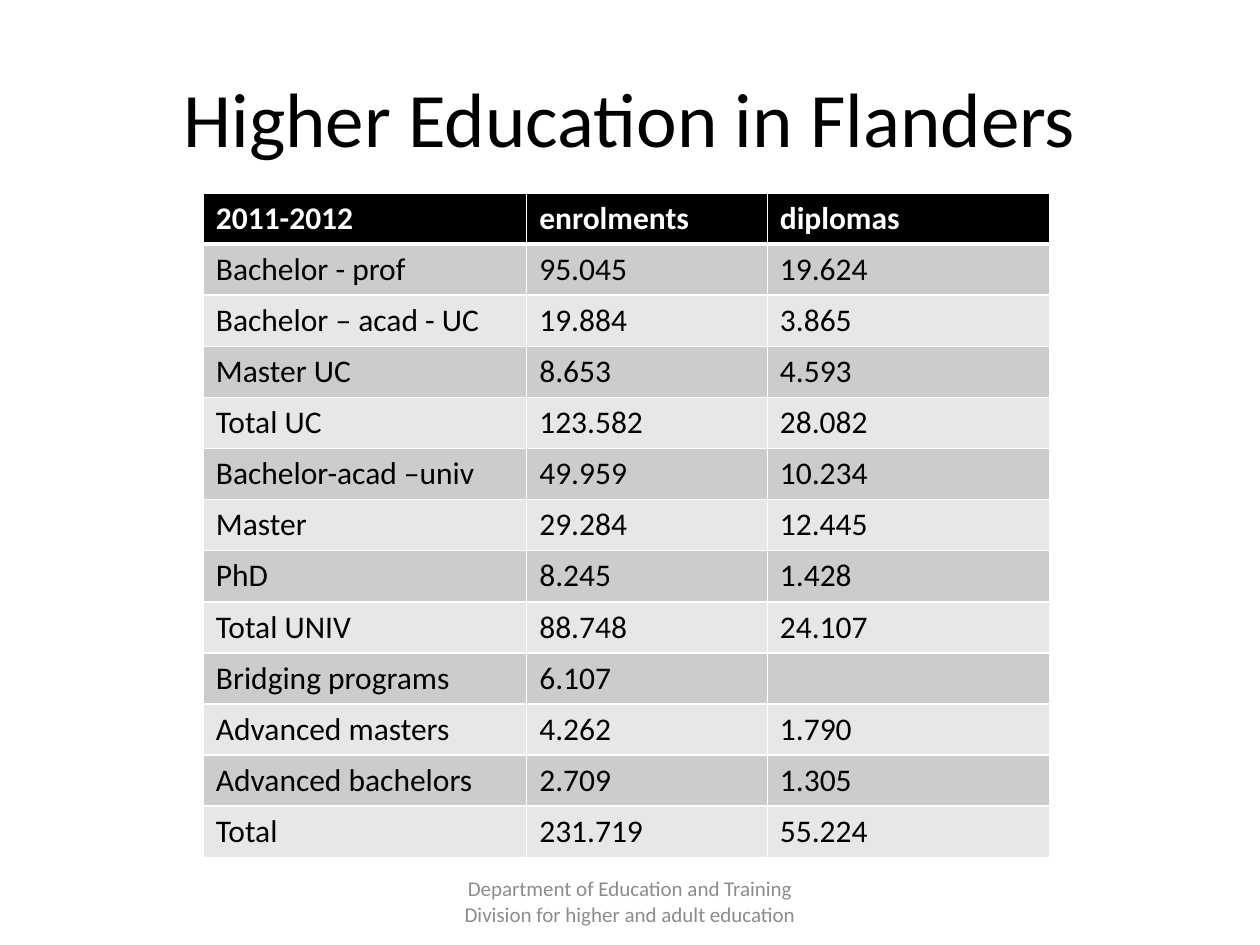
from lxml import etree
from pptx import Presentation
from pptx.dml.color import RGBColor
from pptx.enum.text import MSO_ANCHOR, PP_ALIGN
from pptx.oxml.ns import qn
from pptx.util import Pt

CENTER = PP_ALIGN.CENTER
LEFT = PP_ALIGN.LEFT
MIDDLE = MSO_ANCHOR.MIDDLE
THEME = {
    "font": "Calibri",
    "black": "000000",
    "white": "FFFFFF",
    "footer": "8C8C8C",
    "bands": ("CCCCCC", "E7E7E7"),
    "title_size": 44,
    "table_size": 18,
    "footer_size": 12,
}


def write_text(text_frame, text, *, size, color, bold=False, align=LEFT):
    paragraph = text_frame.paragraphs[0]
    paragraph.alignment = align
    paragraph.font.size = Pt(size)
    if not text:
        return
    run = paragraph.add_run()
    run.text = text
    run.font.name = THEME["font"]
    run.font.size = Pt(size)
    run.font.bold = bold
    run.font.color.rgb = RGBColor.from_string(color)


def add_border(cell, side, width):
    properties = cell._tc.get_or_add_tcPr()
    line = etree.SubElement(properties, qn(f"a:ln{side}"), w=str(Pt(width)))
    fill = etree.SubElement(line, qn("a:solidFill"))
    etree.SubElement(fill, qn("a:srgbClr"), val=THEME["white"])


presentation = Presentation()
presentation.slide_width = Pt(720)
presentation.slide_height = Pt(540)
slide = presentation.slides.add_slide(presentation.slide_layouts[5])

title = slide.shapes.title
title.left, title.top, title.width, title.height = Pt(36), Pt(21.6), Pt(648), Pt(90)
title.text_frame.vertical_anchor = MIDDLE
write_text(title.text_frame, "Higher Education in Flanders",
           size=THEME["title_size"], color=THEME["black"], align=CENTER)

footer = slide.shapes.add_textbox(Pt(246), Pt(500.5), Pt(228), Pt(28.8))
footer.text_frame.word_wrap = True
footer.text_frame.vertical_anchor = MIDDLE
write_text(footer.text_frame,
           "Department of Education and Training Division for higher and adult education",
           size=THEME["footer_size"], color=THEME["footer"], align=CENTER)

rows = [
    ("2011-2012", "enrolments", "diplomas"),
    ("Bachelor - prof", "95.045", "19.624"),
    ("Bachelor – acad - UC", "19.884", "3.865"),
    ("Master UC", "8.653", "4.593"),
    ("Total UC", "123.582", "28.082"),
    ("Bachelor-acad –univ", "49.959", "10.234"),
    ("Master", "29.284", "12.445"),
    ("PhD", "8.245", "1.428"),
    ("Total UNIV", "88.748", "24.107"),
    ("Bridging programs", "6.107", ""),
    ("Advanced masters", "4.262", "1.790"),
    ("Advanced bachelors", "2.709", "1.305"),
    ("Total", "231.719", "55.224"),
]
column_widths = (184.8, 137.5, 161.5)
row_height = 29.2
table = slide.shapes.add_table(
    len(rows), len(column_widths), Pt(116.2), Pt(110.3),
    Pt(sum(column_widths)), Pt(row_height * len(rows))).table
for column, width in zip(table.columns, column_widths):
    column.width = Pt(width)

for row_index, values in enumerate(rows):
    table.rows[row_index].height = Pt(row_height)
    is_header = row_index == 0
    fill_color = THEME["black"] if is_header else THEME["bands"][(row_index - 1) % 2]
    text_color = THEME["white"] if is_header else THEME["black"]
    border_widths = {"L": 1, "R": 1, "T": 3 if row_index == 1 else 1, "B": 3 if is_header else 1}
    for column_index, value in enumerate(values):
        cell = table.cell(row_index, column_index)
        for side, width in border_widths.items():
            add_border(cell, side, width)
        cell.fill.solid()
        cell.fill.fore_color.rgb = RGBColor.from_string(fill_color)
        write_text(cell.text_frame, value, size=THEME["table_size"],
                   color=text_color, bold=is_header)

presentation.save("out.pptx")
